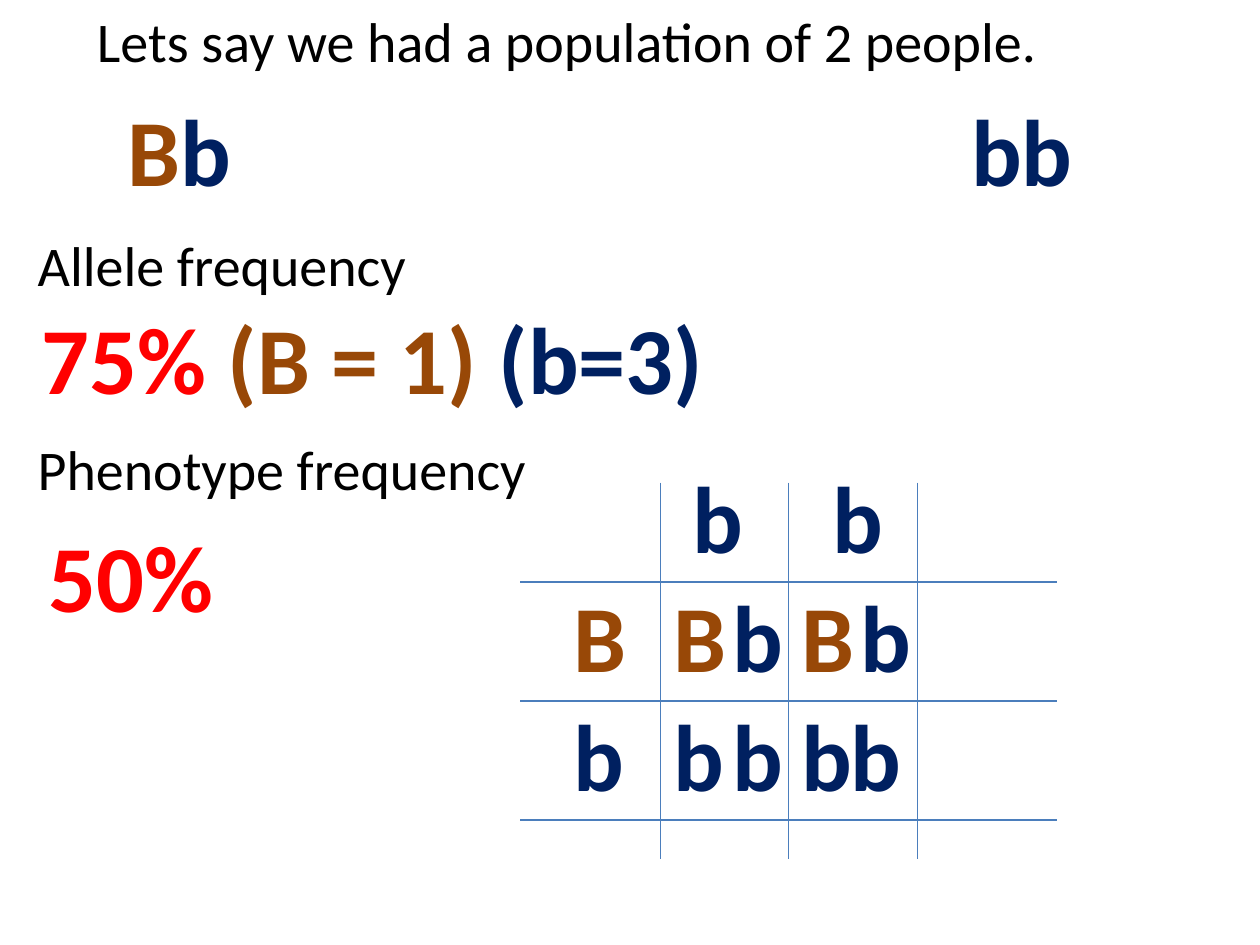
from dataclasses import dataclass

from lxml.etree import SubElement
from pptx import Presentation
from pptx.dml.color import RGBColor as RGB
from pptx.enum.shapes import MSO_CONNECTOR as CONN
from pptx.enum.text import MSO_ANCHOR as ANCHOR, MSO_AUTO_SIZE as FIT, PP_ALIGN as ALIGN
from pptx.oxml.ns import qn
from pptx.util import Cm, Pt


@dataclass(frozen=True)
class Theme:
    font: str = "Calibri"
    text: RGB = RGB(0x00, 0x00, 0x00)
    brown: RGB = RGB(0x98, 0x48, 0x07)
    blue: RGB = RGB(0x00, 0x20, 0x60)
    answer: RGB = RGB(0xFF, 0x00, 0x00)
    line: RGB = RGB(0x4B, 0x7E, 0xBC)
    body_size: Pt = Pt(32)
    big_size: Pt = Pt(54)
    line_width: Pt = Pt(0.75)


THEME = Theme()
BIG_HEIGHT = 2.57
ALLELE_COLORS = {"B": THEME.brown, "b": THEME.blue}
ALLELE_WIDTHS = {"B": 1.6, "b": 1.55}


def add_run(p, text, size, color, bold=False):
    r = p.add_run()
    r.text = text
    font = r.font
    font.name, font.size, font.bold = THEME.font, size, bold
    font.color.rgb = color


def add_text_box(slide, left, top, width, height, wrap):
    box = slide.shapes.add_textbox(Cm(left), Cm(top), Cm(width), Cm(height))
    tf = box.text_frame
    tf.word_wrap = wrap
    tf.auto_size = FIT.SHAPE_TO_FIT_TEXT
    return tf


def add_big_text(slide, left, top, width, runs):
    """Centred bold text from (text, color) pairs."""
    p = add_text_box(slide, left, top, width, BIG_HEIGHT, False).paragraphs[0]
    p.alignment = ALIGN.CENTER
    for text, color in runs:
        add_run(p, text, THEME.big_size, color, True)


def add_alleles(slide, left, top, width, alleles):
    """One run for each stretch of the same allele."""
    runs = [(a * alleles.count(a), ALLELE_COLORS[a]) for a in dict.fromkeys(alleles)]
    add_big_text(slide, left, top, width, runs)


def add_line(slide, x1, y1, x2, y2):
    line = slide.shapes.add_connector(CONN.STRAIGHT, Cm(x1), Cm(y1), Cm(x2), Cm(y2))
    line.line.color.rgb = THEME.line
    line.line.width = THEME.line_width
    SubElement(line._element.spPr, qn("a:effectLst"))


def add_title(slide, left, top, width, height):
    title = slide.shapes.title
    title.left, title.top, title.width, title.height = map(Cm, (left, top, width, height))
    tf = title.text_frame
    tf.word_wrap = True
    tf.auto_size = FIT.SHAPE_TO_FIT_TEXT
    tf.vertical_anchor = ANCHOR.TOP
    p = tf.paragraphs[0]
    p.alignment = ALIGN.LEFT
    add_run(p, "Lets say we had a population of 2 people.", THEME.body_size, THEME.text)


def add_population(slide, left, top, width):
    person_width = 2.6
    add_alleles(slide, left, top, person_width, "Bb")
    add_alleles(slide, left + width - person_width, top, person_width, "bb")


def add_frequencies(slide, left, top, width, height):
    tf = add_text_box(slide, left, top, width, height, True)
    add_run(tf.paragraphs[0], "Allele frequency", THEME.body_size, THEME.text)
    p = tf.add_paragraph()
    p.space_before = Pt(78)
    add_run(p, "Phenotype frequency", THEME.body_size, THEME.text)

    add_big_text(slide, left, top + 1.4, 14, [
        ("75% ", THEME.answer), ("(B = 1) ", THEME.brown), ("(b=3)", THEME.blue)])
    add_big_text(slide, left + 0.2, top + 5.79, 4.29, [("50% ", THEME.answer)])


def add_punnett_square(slide, left, top, width, height):
    col_step, row_step = 2.59, 2.4
    col_xs = [left + 2.82 + i * col_step for i in range(3)]
    row_ys = [top + 2 + i * row_step for i in range(3)]
    for x in col_xs:
        add_line(slide, x, top, x, top + height)
    for y in row_ys:
        add_line(slide, left, y, left + width, y)

    def add_allele(x, row, allele):
        y = top - 0.61 + row * row_step
        add_alleles(slide, x, y, ALLELE_WIDTHS[allele], allele)

    for x, allele in zip((left + 3.2, left + 6.02), "bb"):
        add_allele(x, 0, allele)
    second_offsets = ((1.19, 1.19), (1.19, 0.99))
    for row, (allele, offsets) in enumerate(zip("Bb", second_offsets), start=1):
        add_allele(left + 0.81, row, allele)
        for x, offset in zip(col_xs, offsets):
            add_allele(x, row, allele)
            add_allele(x + offset, row, "b")


def main():
    prs = Presentation()
    prs.slide_width, prs.slide_height = Cm(25.4), Cm(19.05)
    slide = prs.slides.add_slide(prs.slide_layouts.get_by_name("Title Only"))
    add_title(slide, 1.7, 0, 22.2, 1.63)
    add_population(slide, 2.31, 1.73, 19.59)
    add_frequencies(slide, 0.51, 4.52, 13.79, 5.74)
    add_punnett_square(slide, 10.49, 9.73, 10.82, 7.59)
    prs.save("out.pptx")


if __name__ == "__main__":
    main()
